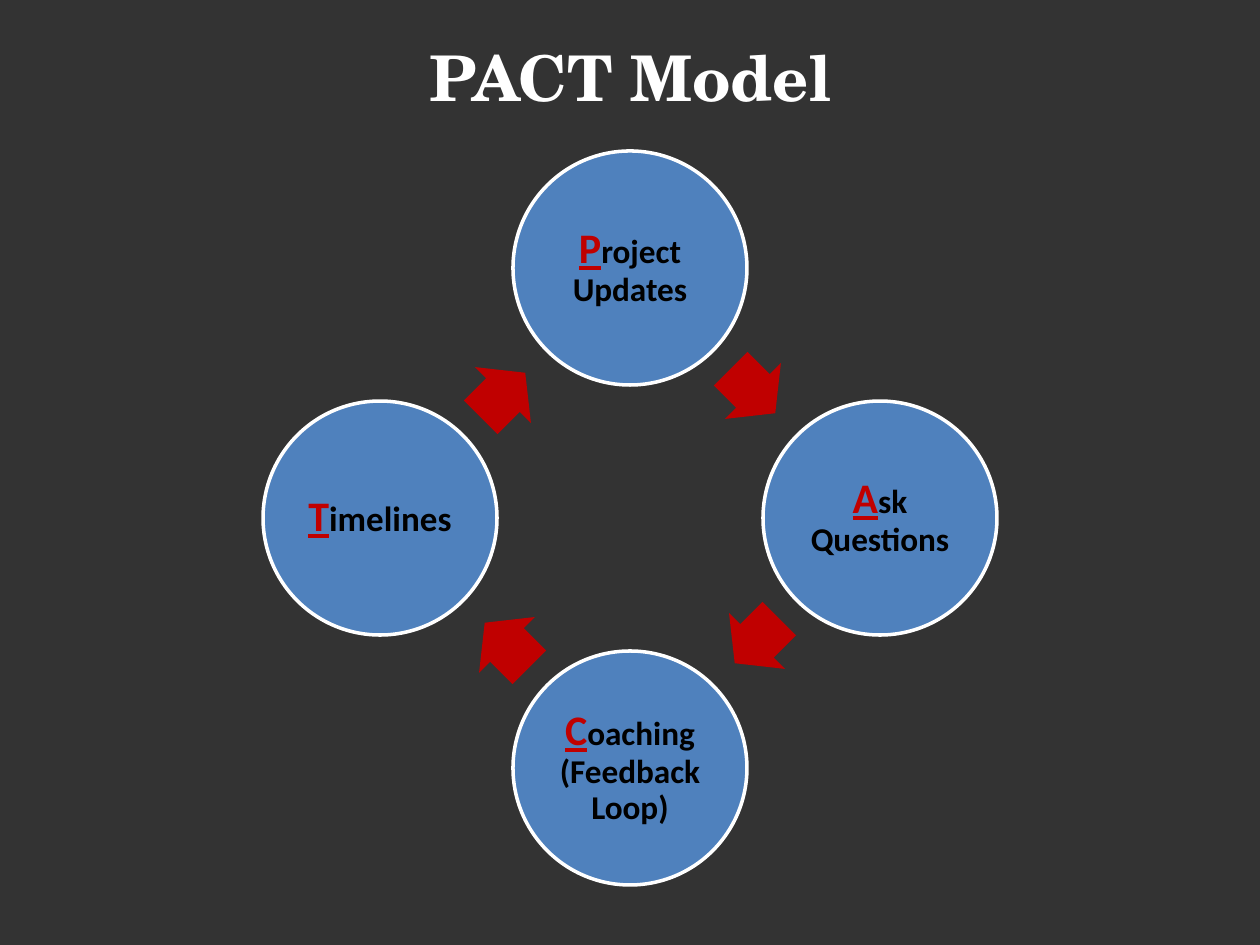
"""Build the PACT Model cycle slide."""
from dataclasses import dataclass
from typing import Any

from pptx import Presentation, util as u
from pptx.dml.color import RGBColor
from pptx.enum import shapes as sh, text as t

HUES = {"back": "333333", "disc": "4F81BD", "rim": "FFFFFF",
        "red": "C00000", "ink": "000000", "title": "FFFFFF"}
SCALE = 914400 / 126
MID = (630, 518)
REACH, DISC = 250, 234
ARROW = (63, 79)
FRAME = {"word_wrap": True, "vertical_anchor": t.MSO_ANCHOR.MIDDLE}
INSET = {f"margin_{side}": u.Inches(0.03)
         for side in ("left", "top", "right", "bottom")}
PARA = {"alignment": t.PP_ALIGN.CENTER, "line_spacing": 0.9}
HEAD = {"name": "TeX Gyre Schola", "size": u.Pt(36), "bold": True}
CAP = {"name": "Calibri", "size": u.Pt(24), "bold": True, "underline": True}
BODY = {"name": "Calibri", "bold": True, "underline": False}


@dataclass(frozen=True)
class Step:
    cap: str
    rest: str
    size: int = 19


STEPS = [Step("P", "roject Updates"), Step("A", "sk Questions"),
         Step("C", "oaching (Feedback Loop)"), Step("T", "imelines", 20)]


def px(num: float) -> u.Emu:
    """Turn px into EMU."""
    return u.Emu(round(num * SCALE))


def hue(key: str) -> RGBColor:
    """Look up a colour."""
    return RGBColor.from_string(HUES[key])


def style(item: Any, vals: dict) -> None:
    """Set attributes from a dict."""
    for key, val in vals.items():
        setattr(item, key, val)


def write(para: Any, words: str, vals: dict, key: str) -> None:
    """Add one formatted run."""
    run = para.add_run()
    run.text = words
    style(run.font, vals)
    run.font.color.rgb = hue(key)


def place(slide: Any, kind: Any, spot: tuple[int, int],
          size: tuple[int, int], key: str) -> Any:
    """Add a filled shape centred on an offset from the middle."""
    left, top = (m + s - d / 2 for m, s, d in zip(MID, spot, size))
    item = slide.shapes.add_shape(kind, px(left), px(top), *map(px, size))
    item.shadow.inherit = False
    item.fill.solid()
    item.fill.fore_color.rgb = hue(key)
    return item


def draw_disc(slide: Any, step: Step, spot: tuple[int, int]) -> None:
    """Draw one labelled circle."""
    disc = place(slide, sh.MSO_SHAPE.OVAL, spot, (DISC, DISC), "disc")
    disc.line.color.rgb = hue("rim")
    disc.line.width = u.Pt(2)
    style(disc.text_frame, FRAME | INSET)
    para = disc.text_frame.paragraphs[0]
    style(para, PARA)
    write(para, step.cap, CAP, "red")
    write(para, step.rest, BODY | {"size": u.Pt(step.size)}, "ink")


def draw_arrow(slide: Any, spot: tuple[int, int], turn: int) -> None:
    """Draw one turned arrow."""
    arrow = place(slide, sh.MSO_SHAPE.RIGHT_ARROW, spot, ARROW, "red")
    arrow.line.fill.background()
    arrow.adjustments[0], arrow.adjustments[1] = 0.6, 0.5
    arrow.rotation = turn


def draw_title(slide: Any, words: str) -> None:
    """Place and format the title."""
    title = slide.shapes.title
    style(title, {"left": px(95), "top": px(0),
                  "width": px(1071), "height": px(152)})
    style(title.text_frame, FRAME)
    para = title.text_frame.paragraphs[0]
    para.alignment = t.PP_ALIGN.CENTER
    write(para, words, HEAD, "title")


def main() -> None:
    """Build and save the slide."""
    deck = Presentation()
    style(deck, {"slide_width": px(1260), "slide_height": px(945)})
    slide = deck.slides.add_slide(deck.slide_layouts[5])
    slide.background.fill.solid()
    slide.background.fill.fore_color.rgb = hue("back")
    draw_title(slide, "PACT Model")
    spot, gap = (0, -REACH), (123, -127)
    for num, step in enumerate(STEPS):
        draw_disc(slide, step, spot)
        draw_arrow(slide, gap, 45 + 90 * num)
        spot, gap = ((-y, x) for x, y in (spot, gap))
    deck.save("out.pptx")


if __name__ == "__main__":
    main()
